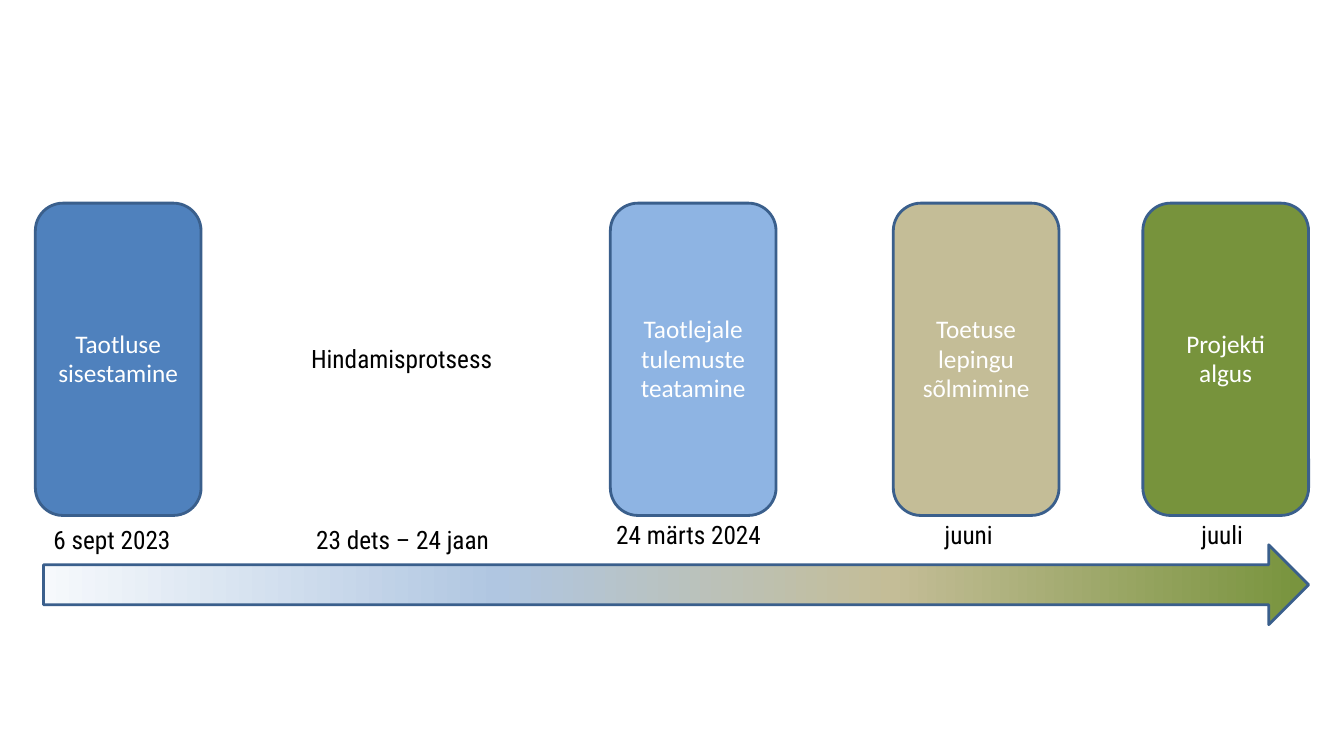
from copy import deepcopy

from pptx import Presentation
from pptx.dml.color import RGBColor
from pptx.enum.shapes import MSO_SHAPE
from pptx.enum.text import MSO_ANCHOR, MSO_AUTO_SIZE, PP_ALIGN
from pptx.oxml.ns import qn
from pptx.util import Inches, Pt

ROUNDED = MSO_SHAPE.ROUNDED_RECTANGLE
RIGHT_ARROW = MSO_SHAPE.RIGHT_ARROW
MIDDLE = MSO_ANCHOR.MIDDLE
CENTER = PP_ALIGN.CENTER
LEFT = PP_ALIGN.LEFT
FIT_SHAPE = MSO_AUTO_SIZE.SHAPE_TO_FIT_TEXT

COLORS = {
    "outline": "3A5F8C",
    "black": "000000",
    "white": "FFFFFF",
    "blue": "4F81BD",
    "light_blue": "8EB4E3",
    "sand": "C4BD97",
    "green": "77933C",
    "pale": "F6F9FC",
    "mist": "B0C6E1",
}


def add_outlined_shape(kind, left, top, width, height):
    shape = slide.shapes.add_shape(
        kind, Inches(left), Inches(top), Inches(width), Inches(height))
    shape.shadow.inherit = False
    shape.line.color.rgb = RGBColor.from_string(COLORS["outline"])
    shape.line.width = Pt(2)
    return shape


def write_text(shape, text, font_name, color, alignment):
    shape.text_frame.text = text
    paragraph = shape.text_frame.paragraphs[0]
    paragraph.alignment = alignment
    paragraph.line_spacing = 0.97
    font = paragraph.runs[0].font
    font.name = font_name
    font.size = Pt(18)
    font.color.rgb = RGBColor.from_string(COLORS[color])


presentation = Presentation()
presentation.slide_width = Inches(13.3)
presentation.slide_height = Inches(7.48)
slide = presentation.slides.add_slide(presentation.slide_layouts[6])

arrow = add_outlined_shape(RIGHT_ARROW, 0.43, 5.39, 12.52, 0.79)
arrow.fill.gradient()
arrow.fill.gradient_angle = 0
stop_list = arrow.element.spPr.find(".//" + qn("a:gsLst"))
for stop_element in list(stop_list):
    stop_list.append(deepcopy(stop_element))
arrow_stops = [(0, "pale"), (0.36, "mist"), (0.67, "sand"), (1, "green")]
for stop, (position, color) in zip(arrow.fill.gradient_stops, arrow_stops):
    stop.position = position
    stop.color.rgb = RGBColor.from_string(COLORS[color])

labels = [
    ("6 sept 2023", 0.43, 5.16, 1.37),
    ("23 dets – 24 jaan", 3.03, 5.16, 1.93),
    ("24 märts 2024", 6, 5.11, 1.64),
    ("juuni", 9.25, 5.11, 0.68),
    ("juuli", 11.79, 5.11, 0.62),
    ("Hindamisprotsess", 2.98, 3.36, 2.01),
]
for text, left, top, width in labels:
    label = slide.shapes.add_textbox(
        Inches(left), Inches(top), Inches(width), Inches(0.39))
    label.text_frame.word_wrap = False
    label.text_frame.auto_size = FIT_SHAPE
    write_text(label, text, "Roboto Condensed", "black", LEFT)

stages = [
    ("Taotluse sisestamine", 0.35, "blue"),
    ("Taotlejale tulemuste teatamine", 6.04, "light_blue"),
    ("Toetuse lepingu sõlmimine", 8.84, "sand"),
    ("Projekti algus", 11.31, "green"),
]
for text, left, color in stages:
    stage = add_outlined_shape(ROUNDED, left, 2.01, 1.64, 3.09)
    stage.fill.solid()
    stage.fill.fore_color.rgb = RGBColor.from_string(COLORS[color])
    stage.text_frame.word_wrap = True
    stage.text_frame.vertical_anchor = MIDDLE
    write_text(stage, text, "Calibri", "white", CENTER)

presentation.save("out.pptx")
